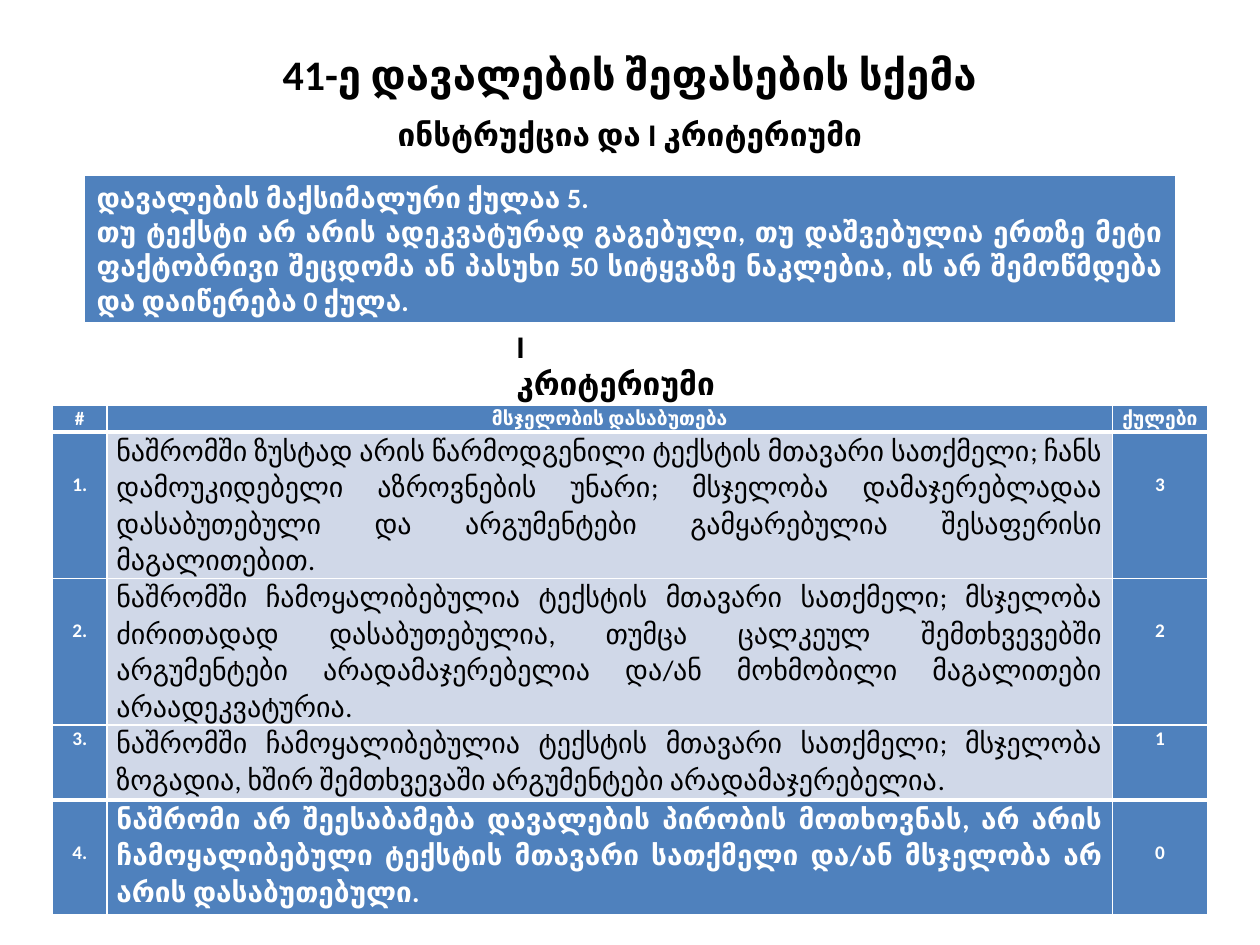
from dataclasses import dataclass
from lxml import etree
from pptx import Presentation
from pptx.dml.color import RGBColor
from pptx.enum import text
from pptx.oxml import ns
from pptx.util import Pt

COLORS = {"ink": "000000", "paper": "FFFFFF", "blue": "4F81BD", "pale": "D0D8E8"}
FONT = "Calibri"
CENTER, JUSTIFY, LEFT = text.PP_ALIGN.CENTER, text.PP_ALIGN.JUSTIFY, text.PP_ALIGN.LEFT
THIN, THICK = 1, 3


@dataclass
class Line:
    wording: str
    size: float
    color: str = "paper"
    bold: bool = True
    align: int = CENTER
    before: float = 0
    after: float = 0
    spacing: float = 1


@dataclass
class Criterion:
    number: str
    wording: str
    points: str
    height: float
    label_drop: float = 0
    fill: str = "pale"
    ink: str = "ink"
    bold: bool = False
    top: float = THIN


CRITERIA = [
    Criterion("1.", "ნაშრომში ზუსტად არის წარმოდგენილი ტექსტის მთავარი სათქმელი; ჩანს "
              "დამოუკიდებელი აზროვნების უნარი; მსჯელობა დამაჯერებლადაა დასაბუთებული და "
              "არგუმენტები გამყარებულია შესაფერისი მაგალითებით.", "3", 83.7, 22.5),
    Criterion("2.", "ნაშრომში ჩამოყალიბებულია ტექსტის მთავარი სათქმელი; მსჯელობა "
              "ძირითადად დასაბუთებულია, თუმცა ცალკეულ შემთხვევებში არგუმენტები "
              "არადამაჯერებელია და/ან მოხმობილი მაგალითები არაადეკვატურია.", "2", 83.7, 22.5),
    Criterion("3.", "ნაშრომში ჩამოყალიბებულია ტექსტის მთავარი სათქმელი; მსჯელობა "
              "ზოგადია, ხშირ შემთხვევაში არგუმენტები არადამაჯერებელია.", "1", 43),
    Criterion("4.", "ნაშრომი არ შეესაბამება დავალების პირობის მოთხოვნას, არ არის "
              "ჩამოყალიბებული ტექსტის მთავარი სათქმელი და/ან მსჯელობა არ არის "
              "დასაბუთებული.", "0", 65.5, 22.5, "blue", "paper", True, THICK),
]


def write_lines(frame, lines: list[Line]) -> None:
    for index, line in enumerate(lines):
        paragraph = frame.paragraphs[0] if index == 0 else frame.add_paragraph()
        paragraph.alignment = line.align
        paragraph.space_before = Pt(line.before)
        paragraph.space_after = Pt(line.after)
        paragraph.line_spacing = line.spacing
        run = paragraph.add_run()
        run.text = line.wording
        run.font.name = FONT
        run.font.size = Pt(line.size)
        run.font.bold = line.bold
        run.font.color.rgb = RGBColor.from_string(COLORS[line.color])


def add_heading(slide, box: tuple, lines: list[Line]) -> None:
    frame = slide.shapes.add_textbox(*map(Pt, box)).text_frame
    frame.word_wrap = True
    frame.vertical_anchor = text.MSO_ANCHOR.MIDDLE
    write_lines(frame, lines)


def add_grid(slide, left: float, top: float, widths: list, heights: list):
    table = slide.shapes.add_table(len(heights), len(widths), Pt(left), Pt(top),
                                   Pt(sum(widths)), Pt(sum(heights))).table
    table.first_row = table.horz_banding = False
    for column, width in zip(table.columns, widths):
        column.width = Pt(width)
    for row, height in zip(table.rows, heights):
        row.height = Pt(height)
    return table


def fill_cell(cell, lines: list[Line], fill: str, top: float = THIN,
              bottom: float = THIN) -> None:
    """Write the lines, paint the cell and rule its four edges in white."""
    write_lines(cell.text_frame, lines)
    cell.fill.solid()
    cell.fill.fore_color.rgb = RGBColor.from_string(COLORS[fill])
    properties = cell._tc.get_or_add_tcPr()
    edges = {"a:lnL": THIN, "a:lnR": THIN, "a:lnT": top, "a:lnB": bottom}
    for index, (tag, width) in enumerate(edges.items()):
        edge = etree.Element(ns.qn(tag), w=str(Pt(width)))
        paint = etree.SubElement(edge, ns.qn("a:solidFill"))
        etree.SubElement(paint, ns.qn("a:srgbClr"), val=COLORS["paper"])
        properties.insert(index, edge)


def fill_tight_cell(cell, line: Line, fill: str, drop: float = 0, top: float = THIN,
                    bottom: float = THIN) -> None:
    """Fill a criteria cell; drop lowers its text from the top edge."""
    cell.margin_left = cell.margin_right = Pt(5.4)
    cell.margin_top, cell.margin_bottom = Pt(drop), Pt(0)
    line.spacing, line.after = 1.07, 8
    fill_cell(cell, [line], fill, top, bottom)


def add_instruction(slide) -> None:
    table = add_grid(slide, 48, 100.3, [624], [84.2])
    wordings = [
        "დავალების მაქსიმალური ქულაა 5.",
        "თუ ტექსტი არ არის ადეკვატურად გაგებული, თუ დაშვებულია ერთზე მეტი ფაქტობრივი "
        "შეცდომა ან პასუხი 50 სიტყვაზე ნაკლებია, ის არ შემოწმდება და დაიწერება 0 ქულა.",
    ]
    fill_cell(table.cell(0, 0), [Line(w, 16, align=JUSTIFY) for w in wordings], "blue")


def add_criteria(slide) -> None:
    heights = [15.3] + [criterion.height for criterion in CRITERIA]
    table = add_grid(slide, 30, 231.6, [31.2, 574.6, 54.2], heights)
    for column, heading in enumerate(["#", "მსჯელობის დასაბუთება", "ქულები"]):
        fill_tight_cell(table.cell(0, column), Line(heading, 11), "blue", bottom=THICK)
    for row, item in enumerate(CRITERIA, start=1):
        for column, label in ((0, item.number), (2, item.points)):
            fill_tight_cell(table.cell(row, column), Line(label, 11), "blue",
                            item.label_drop, item.top)
        description = Line(item.wording, 16, item.ink, item.bold, JUSTIFY)
        fill_tight_cell(table.cell(row, 1), description, item.fill, top=item.top)


def main() -> None:
    deck = Presentation()
    deck.slide_width, deck.slide_height = Pt(720), Pt(540)
    slide = deck.slides.add_slide(deck.slide_layouts[6])
    add_heading(slide, (36, 24, 648, 67), [
        Line("41-ე დავალების შეფასების სქემა", 24, "ink"),
        Line("ინსტრუქცია და I კრიტერიუმი", 18, "ink", before=9),
    ])
    add_instruction(slide)
    add_criteria(slide)
    add_heading(slide, (288, 193.7, 132, 29), [Line("I კრიტერიუმი", 18, "ink", align=LEFT)])
    deck.save("out.pptx")


if __name__ == "__main__":
    main()
